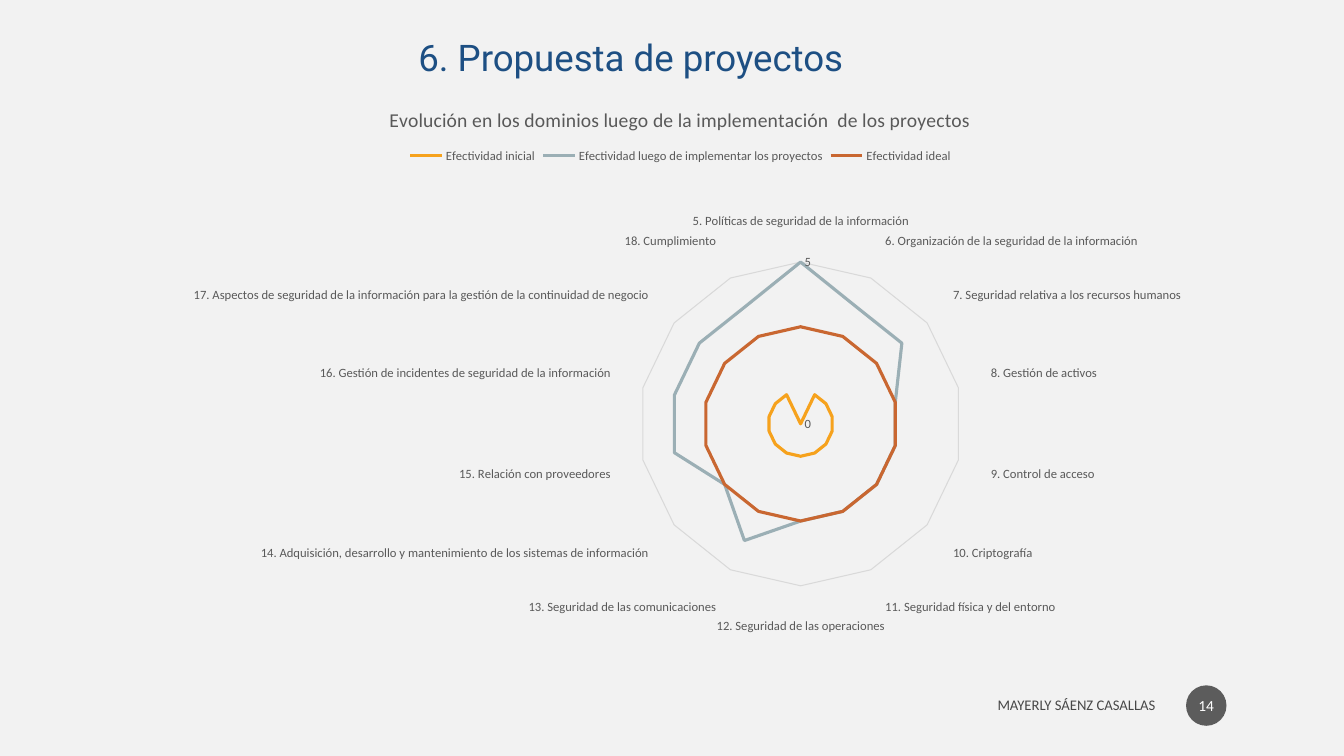
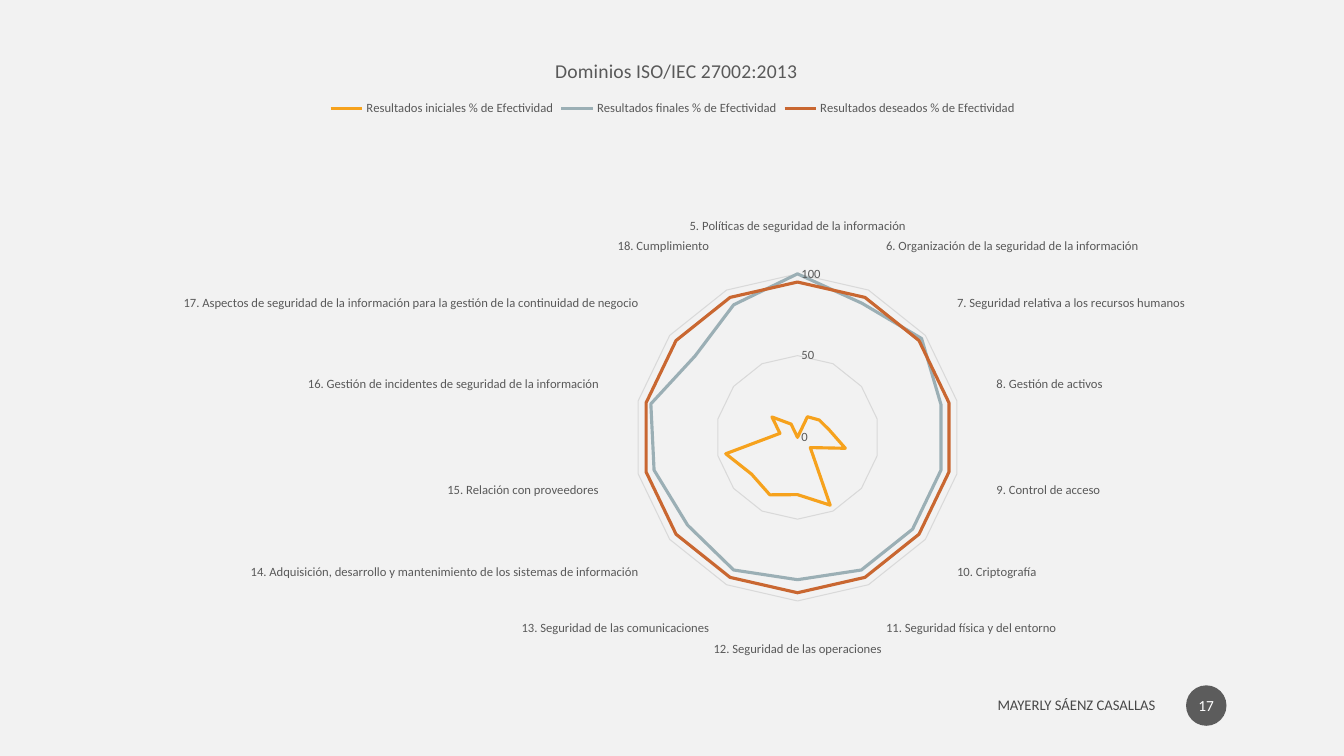
from lxml import etree
from pptx import Presentation
from pptx.chart.data import CategoryChartData
from pptx.dml.color import RGBColor
from pptx.enum.chart import XL_CHART_TYPE, XL_LEGEND_POSITION, XL_TICK_MARK
from pptx.enum.shapes import MSO_SHAPE
from pptx.enum.text import MSO_ANCHOR, PP_ALIGN
from pptx.oxml.ns import qn
from pptx.util import Cm, Pt

RADAR = XL_CHART_TYPE.RADAR
LEGEND_TOP = XL_LEGEND_POSITION.TOP
NO_TICK = XL_TICK_MARK.NONE
OVAL = MSO_SHAPE.OVAL
MIDDLE = MSO_ANCHOR.MIDDLE
LEFT, CENTER, RIGHT = PP_ALIGN.LEFT, PP_ALIGN.CENTER, PP_ALIGN.RIGHT

COLORS = {
    "background": "F2F2F2",
    "title": "1D4F83",
    "author": "000000",
    "badge": "1D1D1D",
    "badge_text": "FFFFFF",
    "chart_text": "595959",
    "grid": "D9D9D9",
    "initial": "F6A21D",
    "final": "9BAFB5",
    "target": "C96731",
}
SERIES_COLORS = ("initial", "final", "target")
BODY_FONT = "Calibri"
TITLE_FONT = "Roboto"
AUTHOR = "MAYERLY SÁENZ CASALLAS"
OPACITY = 70
TITLE_ONLY_LAYOUT, BLANK_LAYOUT = 5, 6

DOMAINS = (
    "5. Políticas de seguridad de la información",
    "6. Organización de la seguridad de la información",
    "7. Seguridad relativa a los recursos humanos",
    "8. Gestión de activos",
    "9. Control de acceso",
    "10. Criptografía",
    "11. Seguridad física y del entorno",
    "12. Seguridad de las operaciones",
    "13. Seguridad de las comunicaciones",
    "14. Adquisición, desarrollo y mantenimiento de los sistemas de información",
    "15. Relación con proveedores",
    "16. Gestión de incidentes de seguridad de la información",
    "17. Aspectos de seguridad de la información para la gestión de la continuidad de negocio",
    "18. Cumplimiento",
)

PROJECT_CHART = {
    "title": "Evolución en los dominios luego de la implementación  de los proyectos",
    "box": (4.37, 2.13, 25.5, 15.14),
    "maximum": 5,
    "step": 5,
    "title_at": (0.21, 0.03),
    "legend_at": (0.23, 0.1),
    "plot_at": (0.02, 0.15, 0.96, 0.83),
    "series": {
        "Efectividad inicial": [0] + [1] * 13,
        "Efectividad luego de implementar los proyectos":
            [5, 4, 4, 3, 3, 3, 3, 3, 4, 3, 4, 4, 4, 4],
        "Efectividad ideal": [3] * 14,
    },
}
DOMAIN_CHART = {
    "title": "Dominios ISO/IEC 27002:2013",
    "box": (4.11, 0.81, 25.76, 18.24),
    "maximum": 100,
    "step": 50,
    "title_at": (0.38, 0.03),
    "legend_at": (0.16, 0.09),
    "plot_at": (0.02, 0.14, 0.96, 0.84),
    "series": {
        "Resultados iniciales % de Efectividad":
            [0, 14, 17, 20, 30, 10, 46, 35, 39, 36, 45, 11, 20, 9],
        "Resultados finales % de Efectividad":
            [100, 91, 97, 90, 90, 90, 90, 87, 90, 86, 90, 92, 80, 90],
        "Resultados deseados % de Efectividad": [95] * 14,
    },
}


def color(name):
    return RGBColor.from_string(COLORS[name])


def box_lengths(box):
    return [Cm(length) for length in box]


def style_font(font, size, color_name, name=BODY_FONT):
    font.name = name
    font.size = Pt(size)
    font.bold = False
    font.color.rgb = color(color_name)


def set_opacity(element, percent):
    for color_element in element.iter(qn("a:srgbClr")):
        alpha = etree.SubElement(color_element, qn("a:alpha"))
        alpha.set("val", str(percent * 1000))


def write_text(text_frame, text, alignment, size, color_name, name=BODY_FONT):
    text_frame.text = text
    text_frame.word_wrap = True
    text_frame.vertical_anchor = MIDDLE
    paragraph = text_frame.paragraphs[0]
    paragraph.alignment = alignment
    run = paragraph.runs[0]
    style_font(run.font, size, color_name, name)
    return run


def add_title(slide, text):
    title = slide.shapes.title
    title.left, title.top, title.width, title.height = box_lengths((10.29, 0.76, 21.03, 1.37))
    write_text(title.text_frame, text, LEFT, 26.2, "title", TITLE_FONT)


def add_footer(slide, number):
    author = slide.shapes.add_textbox(*box_lengths((21.72, 17.32, 7.65, 0.89)))
    run = write_text(author.text_frame, AUTHOR, RIGHT, 10.5, "author")
    set_opacity(run._r, OPACITY)

    badge = slide.shapes.add_shape(OVAL, *box_lengths((29.89, 17.27, 1.02, 1.02)))
    badge.shadow.inherit = False
    badge.fill.solid()
    badge.fill.fore_color.rgb = color("badge")
    badge.line.fill.background()
    set_opacity(badge._element.spPr, OPACITY)
    badge.text_frame.margin_left = badge.text_frame.margin_right = Cm(0.05)
    write_text(badge.text_frame, str(number), CENTER, 11, "badge_text")


def place_chart_part(element, index, fractions):
    layout = element.find(qn("c:layout"))
    if layout is not None:
        element.remove(layout)
    layout = etree.Element(qn("c:layout"))
    element.insert(index, layout)
    manual = etree.SubElement(layout, qn("c:manualLayout"))
    settings = [("xMode", "edge"), ("yMode", "edge"), *zip("xywh", fractions)]
    for tag, value in settings:
        etree.SubElement(manual, qn("c:" + tag)).set("val", str(value))


def style_line(line, color_name, width):
    line.color.rgb = color(color_name)
    line.width = Pt(width)


def style_axes(chart, maximum, step):
    category_axis, value_axis = chart.category_axis, chart.value_axis
    for axis, number_format in ((category_axis, "General"), (value_axis, "0")):
        axis.major_tick_mark = axis.minor_tick_mark = NO_TICK
        axis.tick_labels.number_format = number_format
        axis.tick_labels.number_format_is_linked = False
        style_font(axis.tick_labels.font, 9, "chart_text")
    category_axis.has_major_gridlines = False
    style_line(category_axis.format.line, "grid", 0.75)
    value_axis.minimum_scale = 0
    value_axis.maximum_scale = maximum
    value_axis.major_unit = step
    value_axis.has_major_gridlines = True
    style_line(value_axis.major_gridlines.format.line, "grid", 0.75)
    value_axis.format.line.fill.background()


def add_radar_chart(slide, content):
    chart_data = CategoryChartData()
    chart_data.categories = DOMAINS
    for name, values in content["series"].items():
        chart_data.add_series(name, values)
    chart = slide.shapes.add_chart(RADAR, *box_lengths(content["box"]), chart_data).chart
    style_font(chart.font, 10, "chart_text")

    chart.has_title = True
    paragraph = chart.chart_title.text_frame.paragraphs[0]
    paragraph.text = content["title"]
    style_font(paragraph.runs[0].font, 14, "chart_text")

    chart.has_legend = True
    chart.legend.position = LEGEND_TOP
    chart.legend.include_in_layout = False
    style_font(chart.legend.font, 9, "chart_text")

    style_axes(chart, content["maximum"], content["step"])
    plot = chart.plots[0]
    plot.vary_by_categories = False
    for series, color_name in zip(plot.series, SERIES_COLORS):
        style_line(series.format.line, color_name, 2.25)

    place_chart_part(chart.chart_title._element, 1, content["title_at"])
    place_chart_part(chart.legend._element, 1, content["legend_at"])
    place_chart_part(chart._chartSpace.chart.plotArea, 0, content["plot_at"])


def add_slide(presentation, layout_index, number, chart_content, title=None):
    slide = presentation.slides.add_slide(presentation.slide_layouts[layout_index])
    if title:
        add_title(slide, title)
    add_footer(slide, number)
    add_radar_chart(slide, chart_content)


def main():
    presentation = Presentation()
    presentation.slide_width = Cm(33.87)
    presentation.slide_height = Cm(19.05)
    background = presentation.slide_master.background.fill
    background.solid()
    background.fore_color.rgb = color("background")
    add_slide(presentation, TITLE_ONLY_LAYOUT, 14, PROJECT_CHART, "6. Propuesta de proyectos")
    add_slide(presentation, BLANK_LAYOUT, 17, DOMAIN_CHART)
    presentation.save("out.pptx")


if __name__ == "__main__":
    main()
